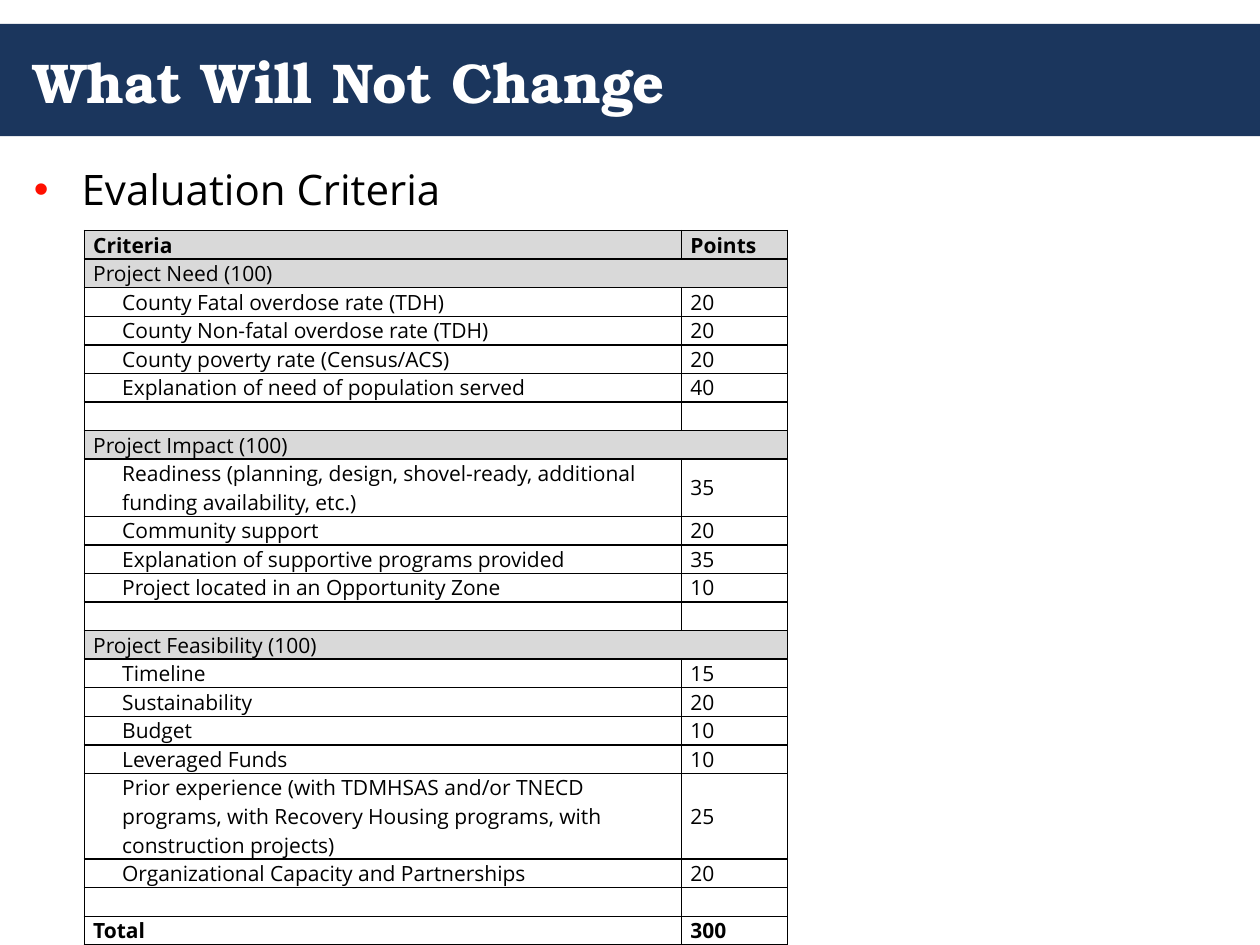
from typing import NamedTuple

from lxml.etree import SubElement
from pptx import Presentation
from pptx.dml.color import RGBColor
from pptx.enum.shapes import MSO_SHAPE as Shape
from pptx.enum.text import MSO_ANCHOR as Anchor, PP_ALIGN as Align
from pptx.oxml.ns import qn
from pptx.util import Inches, Pt

NAVY = RGBColor(0x1B, 0x36, 0x5D)
WHITE = RGBColor(0xFF, 0xFF, 0xFF)
BLACK = RGBColor(0, 0, 0)
RED = RGBColor(0xFF, 0x0F, 0x00)
GREY = RGBColor(0xD9, 0xD9, 0xD9)
SERIF, SANS = "TeX Gyre Bonum", "Open Sans"
GRID_TOP, GRID_HIGH = 1.83, 5.67


class Row(NamedTuple):
    label: str = ""
    points: str = ""
    bold: bool = False
    shade: bool = False
    indent: bool = False
    lines: int = 1


def head(label: str) -> Row:
    return Row(label, shade=True)


def item(label: str, points: int, lines: int = 1) -> Row:
    return Row(label, str(points), indent=True, lines=lines)


ROWS = [
    Row("Criteria", "Points", bold=True, shade=True),
    head("Project Need (100)"),
    item("County Fatal overdose rate (TDH)", 20),
    item("County Non-fatal overdose rate (TDH)", 20),
    item("County poverty rate (Census/ACS)", 20),
    item("Explanation of need of population served", 40),
    Row(),
    head("Project Impact (100)"),
    item("Readiness (planning, design, shovel-ready, additional "
         "funding availability, etc.)", 35, lines=2),
    item("Community support", 20),
    item("Explanation of supportive programs provided", 35),
    item("Project located in an Opportunity Zone", 10),
    Row(),
    head("Project Feasibility (100)"),
    item("Timeline", 15),
    item("Sustainability", 20),
    item("Budget", 10),
    item("Leveraged Funds", 10),
    item("Prior experience (with TDMHSAS and/or TNECD programs, with "
         "Recovery Housing programs, with construction projects)", 25,
         lines=3),
    item("Organizational Capacity and Partnerships", 20),
    Row(),
    Row("Total", "300", bold=True),
]


def add_run(para, text: str, size: int, face: str, color: RGBColor,
            bold: bool = False) -> None:
    run = para.add_run()
    run.text = text
    font = run.font
    font.size, font.name, font.bold = Pt(size), face, bold
    font.color.rgb = color


def add_box(slide, top: float, high: float, anchor):
    box = slide.shapes.add_textbox(Inches(0.17), Inches(top),
                                   Inches(9.67), Inches(high))
    frame = box.text_frame
    frame.word_wrap = True
    frame.vertical_anchor = anchor
    return frame.paragraphs[0]


def add_bullet(para, color: RGBColor) -> None:
    props = para._p.get_or_add_pPr()
    props.set("marL", str(Inches(0.38)))
    props.set("indent", str(-Inches(0.38)))
    tint = SubElement(props, qn("a:buClr"))
    SubElement(tint, qn("a:srgbClr"), val=str(color))
    SubElement(props, qn("a:buFont"), typeface="Arial")
    SubElement(props, qn("a:buChar"), char="•")


def add_border(cell) -> None:
    props = cell._tc.get_or_add_tcPr()
    for side in ("lnL", "lnR", "lnT", "lnB"):
        line = SubElement(props, qn(f"a:{side}"), w=str(Pt(1)))
        fill = SubElement(line, qn("a:solidFill"))
        SubElement(fill, qn("a:srgbClr"), val=str(BLACK))


def fill_cell(cell, text: str, row: Row, indent: bool) -> None:
    add_border(cell)
    if row.shade:
        cell.fill.solid()
        cell.fill.fore_color.rgb = GREY
    else:
        cell.fill.background()
    cell.margin_left = cell.margin_right = Inches(0.07)
    cell.margin_top = cell.margin_bottom = 0
    cell.vertical_anchor = Anchor.MIDDLE
    para = cell.text_frame.paragraphs[0]
    para.alignment = Align.LEFT if indent else Align.JUSTIFY
    if indent:
        para._p.get_or_add_pPr().set("marL", str(Inches(0.23)))
    if text:
        add_run(para, text, 12, SANS, BLACK, row.bold)
    else:
        # Keeps an empty row as low as the others
        end = SubElement(para._p, qn("a:endParaRPr"), sz="1200")
        SubElement(end, qn("a:latin"), typeface=SANS)


def add_grid(slide, rows: list[Row]) -> None:
    # Each row is as high as its lines of text
    pitch = GRID_HIGH / sum(row.lines for row in rows)
    table = slide.shapes.add_table(
        len(rows), 2, Inches(0.67), Inches(GRID_TOP),
        Inches(5.58), Inches(GRID_HIGH)).table
    table.first_row = table.horz_banding = False
    for col, width in zip(table.columns, (4.74, 0.84)):
        col.width = Inches(width)
    for i, row in enumerate(rows):
        table.rows[i].height = Inches(row.lines * pitch)
        left, right = table.cell(i, 0), table.cell(i, 1)
        fill_cell(left, row.label, row, row.indent)
        fill_cell(right, row.points, row, False)
        if row.shade and not row.points:
            left.merge(right)


def main() -> None:
    deck = Presentation()
    deck.slide_width, deck.slide_height = Inches(10), Inches(7.5)
    slide = deck.slides.add_slide(deck.slide_layouts[6])

    # Title band
    band = slide.shapes.add_shape(Shape.RECTANGLE, 0, Inches(0.19),
                                  Inches(10), Inches(0.89))
    band.shadow.inherit = False
    band.fill.solid()
    band.fill.fore_color.rgb = NAVY
    band.line.fill.background()
    title = add_box(slide, 0.19, 0.9, Anchor.MIDDLE)
    add_run(title, "What Will Not Change", 32, SERIF, WHITE, True)

    # Bullet line
    topic = add_box(slide, 1.25, 0.67, Anchor.TOP)
    add_bullet(topic, RED)
    add_run(topic, "Evaluation Criteria", 24, SANS, BLACK)

    # Scoring table
    add_grid(slide, ROWS)
    deck.save("out.pptx")


if __name__ == "__main__":
    main()
